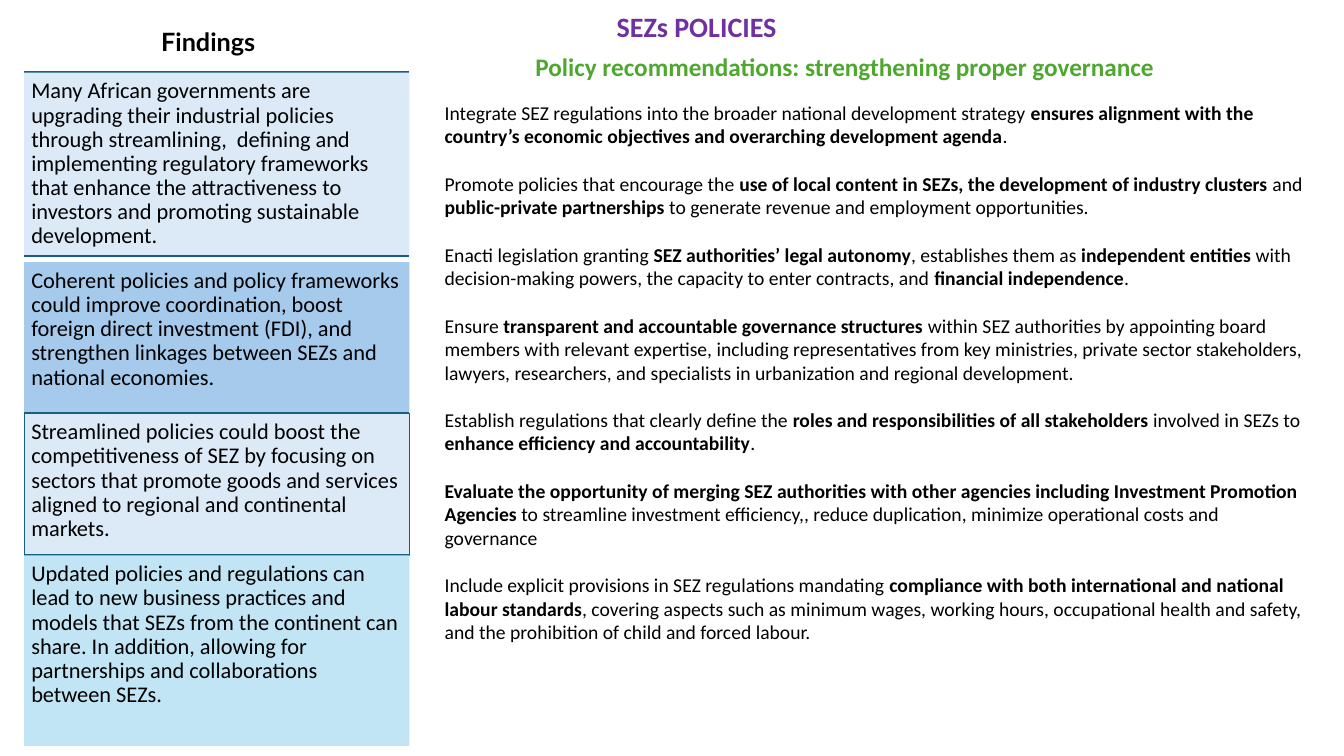
from lxml.etree import SubElement
from pptx import Presentation
from pptx.dml.color import RGBColor
from pptx.enum.shapes import MSO_CONNECTOR as Connector, MSO_SHAPE as Shape
from pptx.enum.text import MSO_ANCHOR as Anchor, MSO_AUTO_SIZE as AutoSize, PP_ALIGN as Align
from pptx.oxml.ns import qn
from pptx.util import Pt

PX = 9144
TEAL = "156082"
TITLE = "SEZs POLICIES"
HEADINGS = [
    ("Findings", (17, 21, 379, 40), "Lato", "000000"),
    ("Policy recommendations: strengthening proper governance", (468, 46, 740, 40), "Calibri", "4EA72E"),
]
RECOMMENDATIONS = [
    "Integrate SEZ regulations into the broader national development strategy *ensures alignment with the country’s economic objectives and overarching development agenda*.",
    "Promote policies that encourage the *use of local content in SEZs, the development of industry clusters* and *public-private partnerships* to generate revenue and employment opportunities.",
    "Enacti legislation granting *SEZ authorities’ legal autonomy*, establishes them as *independent entities *with decision-making powers, the capacity to enter contracts, and *financial independence*.",
    "Ensure *transparent and accountable governance structures *within SEZ authorities by appointing board members with relevant expertise, including representatives from key ministries, private sector stakeholders, lawyers, researchers, and specialists in urbanization and regional development.",
    "Establish regulations that clearly define the *roles and responsibilities of all stakeholders *involved in SEZs to *enhance efficiency and accountability*.",
    "*Evaluate the opportunity of merging SEZ authorities with other agencies including Investment Promotion Agencies *to streamline investment efficiency,, reduce duplication, minimize operational costs and governance",
    "Include explicit provisions in SEZ regulations mandating *compliance with both international and national labour standards*, covering aspects such as minimum wages, working hours, occupational health and safety, and the prohibition of child and forced labour.",
]
FINDINGS = [
    (72, 72, 182, "DCEAF7", None,
     "Many African governments are upgrading their industrial policies through streamlining,  defining and implementing regulatory frameworks that enhance the attractiveness to investors and promoting sustainable development."),
    (254, 260, 155, "A6CAEC", None,
     "Coherent policies and policy frameworks could improve coordination, boost foreign direct investment (FDI), and strengthen linkages between SEZs and national economies."),
    (410, 410, 141, "DCEAF7", TEAL,
     "Streamlined policies could boost the competitiveness of SEZ by focusing on sectors that promote goods and services aligned to regional and continental markets."),
    (551, 551, 189, "C1E5F5", None,
     "Updated policies and regulations can lead to new business practices and models that SEZs from the continent can share. In addition, allowing for partnerships and collaborations between SEZs."),
]
CARD_LEFT, CARD_WIDTH = 24, 382


def px(*lengths):
    return [length * PX for length in lengths]


def color(value):
    return RGBColor.from_string(value)


def place(box, left, top, width, height):
    box.left, box.top, box.width, box.height = px(left, top, width, height)


def write(para, text, size=14, font="Calibri", ink="000000", bold=False,
          align=Align.LEFT, spacing=1.0, after=0):
    para.alignment = align
    para.line_spacing = spacing
    para.space_before = Pt(0)
    para.space_after = Pt(after)
    for index, part in enumerate(text.split("*")):
        if part:
            span = para.add_run()
            span.text = part
            span.font.name = font
            span.font.size = Pt(size)
            span.font.bold = bold or index % 2 == 1
            span.font.color.rgb = color(ink)


def set_frame(box, anchor=Anchor.TOP, inset=(10, 5, 10, 5)):
    frame = box.text_frame
    frame.word_wrap = True
    frame.auto_size = AutoSize.NONE
    frame.vertical_anchor = anchor
    frame.margin_left, frame.margin_top, frame.margin_right, frame.margin_bottom = px(*inset)
    return frame


def add_rule(page, top):
    left, right, height = px(CARD_LEFT, CARD_LEFT + CARD_WIDTH, top)
    rule = page.shapes.add_connector(Connector.STRAIGHT, left, height, right, height)
    rule.line.color.rgb = color(TEAL)
    rule.line.width = Pt(1.5)
    SubElement(rule._element.spPr, qn("a:effectLst"))


def add_card(page, top, height, fill, outline, text):
    card = page.shapes.add_shape(Shape.RECTANGLE, *px(CARD_LEFT, top, CARD_WIDTH, height))
    card.shadow.inherit = False
    card.fill.solid()
    card.fill.fore_color.rgb = color(fill)
    if outline:
        card.line.color.rgb = color(outline)
        card.line.width = Pt(0.75)
    else:
        card.line.fill.background()
    frame = set_frame(card, inset=(7, 7, 7, 7))
    write(frame.paragraphs[0], text, size=16, spacing=0.9)


def add_recommendations(body):
    place(body, 431, 95, 878, 582)
    frame = set_frame(body)
    for index, text in enumerate(RECOMMENDATIONS):
        para = frame.add_paragraph() if index else frame.paragraphs[0]
        write(para, text, after=17)
        properties = para._p.get_or_add_pPr()
        properties.set("marL", "0")
        properties.set("indent", "0")
        SubElement(properties, qn("a:buNone"))


def main():
    deck = Presentation()
    deck.slide_width, deck.slide_height = px(1333, 750)
    page = deck.slides.add_slide(deck.slide_layouts[1])

    title = page.shapes.title
    place(title, 92, 10, 1150, 36)
    frame = set_frame(title, Anchor.MIDDLE, (58, 5, 10, 5))
    write(frame.paragraphs[0], TITLE, size=20, ink="7030A0", bold=True, align=Align.CENTER, spacing=0.9)

    for text, bounds, font, ink in HEADINGS:
        box = page.shapes.add_textbox(*px(*bounds))
        write(set_frame(box).paragraphs[0], text, size=18, font=font, ink=ink, bold=True, align=Align.CENTER)

    add_recommendations(page.placeholders[1])
    for rule_top, card_top, height, fill, outline, text in FINDINGS:
        add_rule(page, rule_top)
        add_card(page, card_top, height, fill, outline, text)

    deck.save("out.pptx")


if __name__ == "__main__":
    main()
